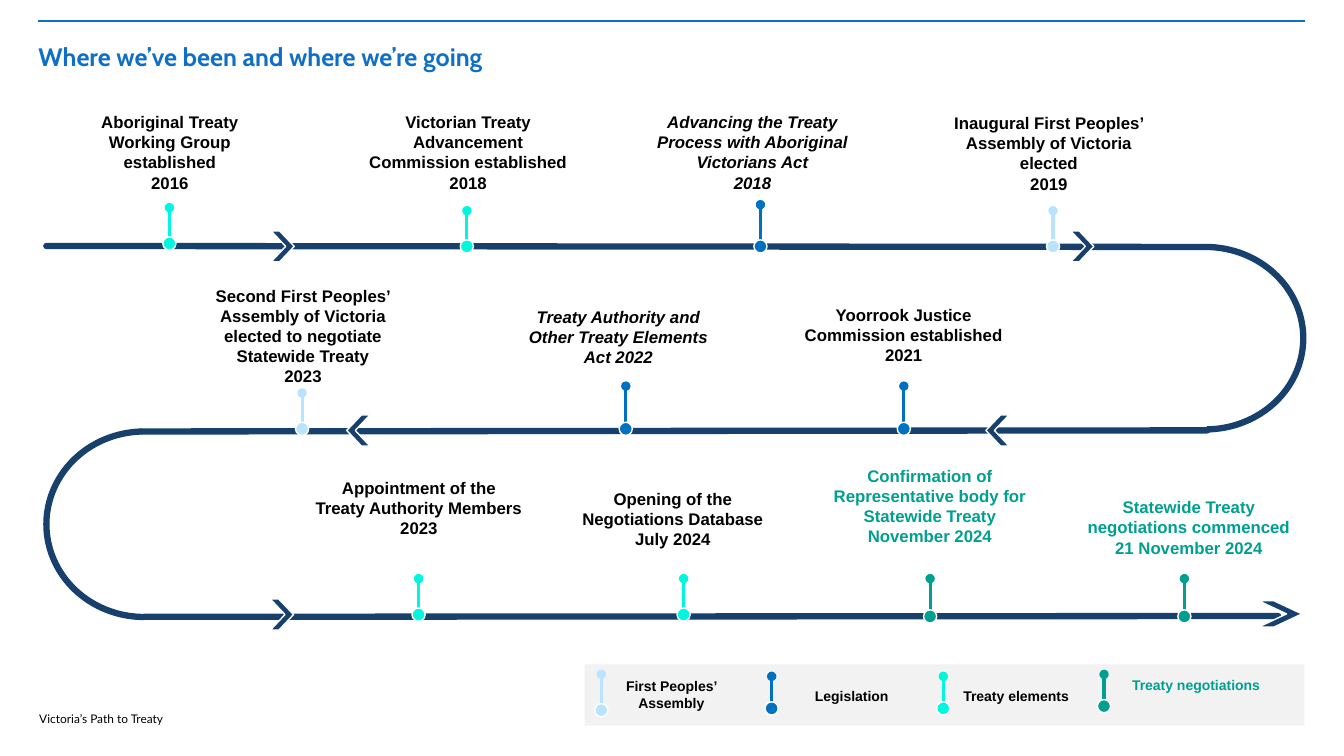
from dataclasses import dataclass

from lxml import etree
from pptx import Presentation
from pptx import util as u
from pptx.dml.color import RGBColor
from pptx.enum import shapes, text
from pptx.oxml.ns import qn

COLOURS = {
    "title": "0F6FC6", "path": "17406D", "panel": "F2F2F2", "white": "FFFFFF",
    "black": "000000", "legislation": "0070C0", "negotiations": "009F90",
    "elements": "00F6DF", "assembly": "B9E3FF",
}
DOT = 9.4
STEM = 26
EVENT_WIDTH = 162


@dataclass
class Marker:
    x: float
    top: float
    dot_y: float
    category: str


@dataclass
class Label:
    left: float
    top: float
    width: float
    height: float
    lines: list[str]
    ink: str = "black"
    italic: bool = False
    size: float = 12


@dataclass
class Chevron:
    tip_x: float
    mid_y: float
    direction: int = 1
    width: float = 16.6
    height: float = 22.2
    band: float = 6.1


@dataclass
class Event:
    label: Label
    marker: Marker


def event(left: float, top: float, height: float, lines: list[str], marker: Marker,
          italic: bool = False) -> Event:
    ink = "negotiations" if marker.category == "negotiations" else "black"
    return Event(Label(left, top, EVENT_WIDTH, height, lines, ink, italic), marker)


EVENTS = [
    event(40.3, 76.3, 65, ["Aboriginal Treaty Working Group established", "2016"],
          Marker(121, 148.3, 173.9, "elements")),
    event(253.4, 76.3, 65, ["Victorian Treaty Advancement Commission established", "2018"],
          Marker(333.5, 150.5, 176, "elements")),
    event(456.5, 76.3, 65, ["Advancing the Treaty Process with Aboriginal Victorians Act", "2018"],
          Marker(543.2, 146.2, 176, "legislation"), italic=True),
    event(668.2, 77, 65, ["Inaugural First Peoples’ Assembly of Victoria elected", "2019"],
          Marker(752.2, 150.5, 176, "assembly")),
    event(564.5, 213.8, 50.4, ["Yoorrook Justice Commission established", "2021"],
          Marker(645.6, 275.8, 306.3, "legislation")),
    event(360.7, 215.3, 50.4, ["Treaty Authority and Other Treaty Elements Act 2022"],
          Marker(447, 275.8, 306.3, "legislation"), italic=True),
    event(135.4, 200.2, 80, ["Second First Peoples’ Assembly of Victoria elected to negotiate "
                             "Statewide Treaty", "2023"],
          Marker(215.8, 280.7, 306.3, "assembly")),
    event(218.2, 337.7, 50.4, ["Appointment of the Treaty Authority Members", "2023"],
          Marker(299, 413.3, 439, "elements")),
    event(399.6, 345.6, 50.4, ["Opening of the Negotiations Database", "July 2024"],
          Marker(488.3, 413.3, 439, "elements")),
    event(583.2, 329, 65, ["Confirmation of Representative body for Statewide Treaty",
                           "November 2024"],
          Marker(664.4, 413.3, 440.3, "negotiations")),
    event(768.2, 351.4, 50.4, ["Statewide Treaty negotiations commenced", "21 November 2024"],
          Marker(846, 413.3, 440.3, "negotiations")),
]

LEGEND = [
    Event(Label(427, 480.2, 105.1, 32.4, ["First Peoples’ Assembly"], size=10),
          Marker(429.5, 481.7, 507.3, "assembly")),
    Event(Label(555.8, 487.4, 105.1, 19.4, ["Legislation"], size=10),
          Marker(551.2, 483.1, 506, "legislation")),
    Event(Label(673.2, 487.4, 105.1, 19.4, ["Treaty elements"], size=10),
          Marker(673.8, 483.1, 506, "elements")),
    Event(Label(797, 479.5, 114.5, 19.4, ["Treaty negotiations"], "negotiations", size=10),
          Marker(788.6, 481.7, 504.4, "negotiations")),
]

PATH_LINES = [(103, 440.6, 913, 440), (101.5, 308.2, 862.6, 307.4), (33.1, 175.7, 861.1, 176.4)]

# left, top, width, height, rotation, end angle
PATH_BENDS = [(791.3, 176.4, 139.7, 130.3, 0, 53.49), (33.1, 308.2, 139.7, 132.5, 180, 53.28)]

CHEVRONS = [
    Chevron(209.7, 439), Chevron(781.4, 176), Chevron(210.2, 176),
    Chevron(704.2, 307.5, -1), Chevron(247.7, 307.5, -1),
    Chevron(930, 438.5, width=31, height=18.8, band=11),
]


def colour(name: str) -> RGBColor:
    return RGBColor.from_string(COLOURS[name])


def draw_line(slide, x1: float, y1: float, x2: float, y2: float, ink: str, weight: float):
    line = slide.shapes.add_connector(
        shapes.MSO_CONNECTOR.STRAIGHT, u.Pt(x1), u.Pt(y1), u.Pt(x2), u.Pt(y2))
    line.line.color.rgb = colour(ink)
    line.line.width = u.Pt(weight)
    etree.SubElement(line.element.spPr, qn("a:effectLst"))
    return line


def fill_shape(shape, fill: str, outline: str | None = None) -> None:
    shape.shadow.inherit = False
    shape.fill.solid()
    shape.fill.fore_color.rgb = colour(fill)
    if outline:
        shape.line.color.rgb = colour(outline)
        shape.line.width = u.Pt(1)
    else:
        shape.line.fill.background()


def draw_bend(slide, left: float, top: float, width: float, height: float,
              rotation: float, end: float) -> None:
    bend = slide.shapes.add_shape(
        shapes.MSO_SHAPE.ARC, u.Pt(left), u.Pt(top), u.Pt(width), u.Pt(height))
    bend.adjustments[0] = 162
    bend.adjustments[1] = end
    bend.rotation = rotation
    bend.shadow.inherit = False
    bend.fill.background()
    bend.line.color.rgb = colour("path")
    bend.line.width = u.Pt(4.5)


def draw_chevron(slide, chevron: Chevron) -> None:
    half = chevron.height / 2
    # Each corner is (distance behind the tip, offset from the middle)
    corners = [(chevron.width, -half), (chevron.band, 0), (chevron.width, half),
               (chevron.width - chevron.band, half), (0, 0),
               (chevron.width - chevron.band, -half)]
    points = [(u.Pt(chevron.tip_x - chevron.direction * back), u.Pt(chevron.mid_y + rise))
              for back, rise in corners]
    builder = slide.shapes.build_freeform(*points[0])
    builder.add_line_segments(points[1:], close=True)
    fill_shape(builder.convert_to_shape(), "path", "white")


def draw_marker(slide, marker: Marker) -> None:
    stem = draw_line(slide, marker.x, marker.top + STEM, marker.x, marker.top,
                     marker.category, 2.25)
    etree.SubElement(stem.element.spPr.get_or_add_ln(), qn("a:tailEnd"), type="oval")
    dot = slide.shapes.add_shape(
        shapes.MSO_SHAPE.OVAL, u.Pt(marker.x - DOT / 2), u.Pt(marker.dot_y - DOT / 2),
        u.Pt(DOT), u.Pt(DOT))
    fill_shape(dot, marker.category, "white")


def draw_label(slide, label: Label) -> None:
    box = slide.shapes.add_textbox(
        u.Pt(label.left), u.Pt(label.top), u.Pt(label.width), u.Pt(label.height))
    frame = box.text_frame
    frame.word_wrap = True
    frame.auto_size = text.MSO_AUTO_SIZE.SHAPE_TO_FIT_TEXT
    frame.text = "\n".join(label.lines)
    for paragraph in frame.paragraphs:
        paragraph.alignment = text.PP_ALIGN.CENTER
        style_font(paragraph.font, "Arial", label.size, label.ink, True)
        paragraph.font.italic = label.italic


def style_font(font, name: str, size: float, ink: str, bold: bool) -> None:
    font.name = name
    font.size = u.Pt(size)
    font.bold = bold
    font.color.rgb = colour(ink)


def fill_heading(box, left: float, top: float, width: float, height: float, wording: str):
    box.left, box.top, box.width, box.height = map(u.Pt, (left, top, width, height))
    frame = box.text_frame
    frame.word_wrap = True
    frame.auto_size = text.MSO_AUTO_SIZE.NONE
    frame.vertical_anchor = text.MSO_ANCHOR.TOP
    frame.margin_left = 0
    frame.text = wording
    paragraph = frame.paragraphs[0]
    paragraph.alignment = text.PP_ALIGN.LEFT
    return paragraph


def main() -> None:
    deck = Presentation()
    deck.slide_width, deck.slide_height = u.Pt(960), u.Pt(540)
    slide = deck.slides.add_slide(deck.slide_layouts[5])

    # Title, rule and footer
    draw_line(slide, 27.4, 15, 932.4, 15, "title", 2)
    title = fill_heading(slide.shapes.title, 27.4, 28, 904.3, 31.7,
                         "Where we’ve been and where we’re going")
    title.line_spacing = 0.9
    style_font(title.font, "Cabin", 18, "title", True)
    footer = fill_heading(slide.shapes.add_textbox(0, 0, 0, 0), 28, 504.7, 368.6, 14.4,
                          "Victoria’s Path to Treaty")
    style_font(footer.font, "Lato", 8.5, "black", False)

    # Winding path
    for ends in PATH_LINES:
        stretch = draw_line(slide, *ends, "path", 4.5)
        stretch.element.spPr.get_or_add_ln().set("cap", "rnd")
    for bend in PATH_BENDS:
        draw_bend(slide, *bend)
    for chevron in CHEVRONS:
        draw_chevron(slide, chevron)

    # Legend panel, then events and legend entries
    panel = slide.shapes.add_shape(
        shapes.MSO_SHAPE.RECTANGLE, u.Pt(417.6), u.Pt(474.5), u.Pt(514.1), u.Pt(43.9))
    fill_shape(panel, "panel")
    for entry in EVENTS + LEGEND:
        draw_label(slide, entry.label)
        draw_marker(slide, entry.marker)

    deck.save("out.pptx")


if __name__ == "__main__":
    main()
